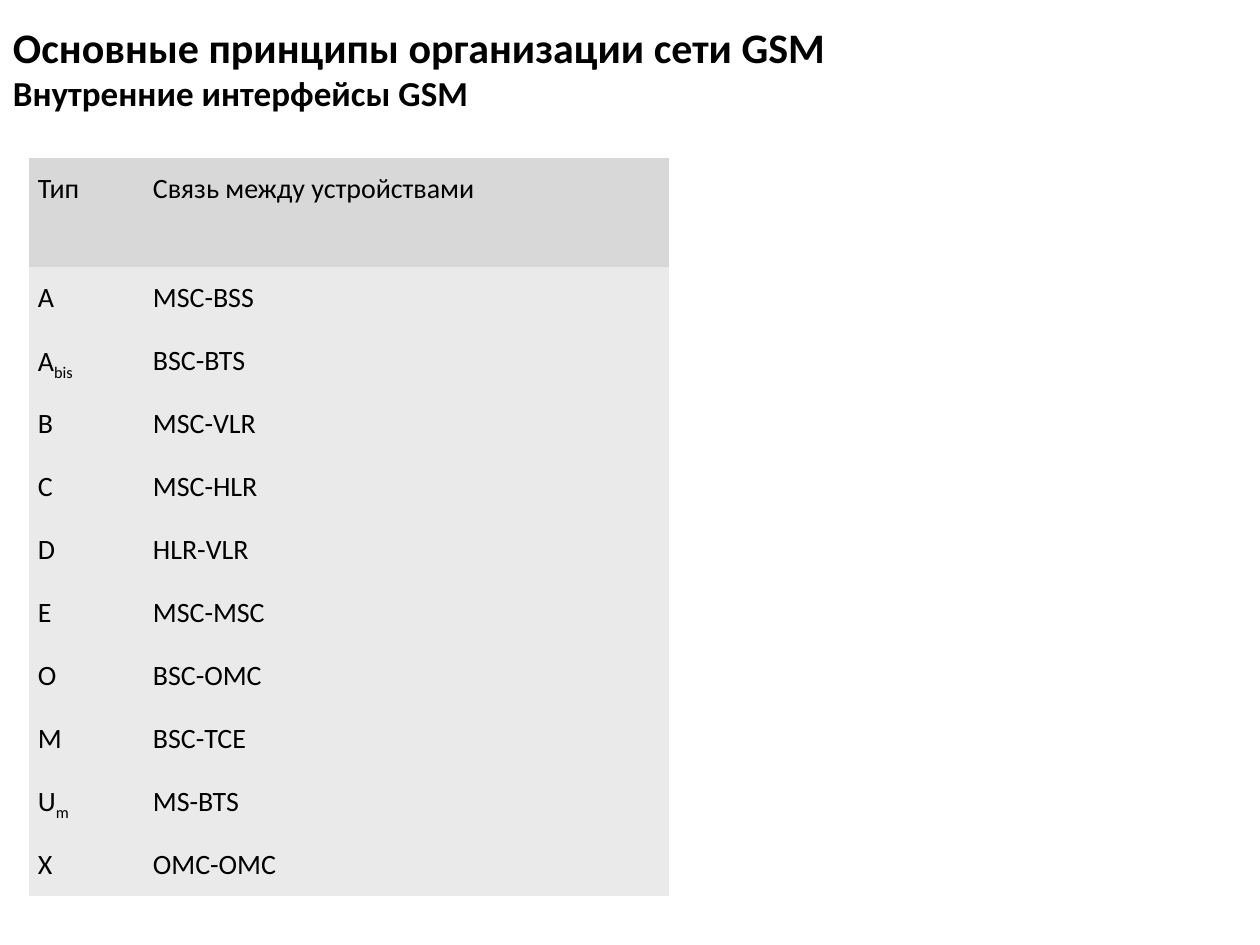
from pptx import Presentation
from pptx.dml.color import RGBColor as Rgb
from pptx.enum.text import MSO_ANCHOR as Anchor
from pptx.util import Pt

PX = 914400 // 126
FONT = "Calibri"
INK, HEAD, BODY = "000000", "D8D8D8", "EAEAEA"
PLAIN = "{2D5ABB26-0587-4C30-8999-92F81FD0307C}"  # table style without grid

TITLE = [
    ("Основные принципы организации сети GSM", 24),
    ("Внутренние интерфейсы GSM", 20),
]
# Type, subscript, linked devices
ROWS = [
    ("Тип", "", "Связь между устройствами"),
    ("A", "", "MSC-BSS"),
    ("A", "bis", "BSC-BTS"),
    ("B", "", "MSC-VLR"),
    ("C", "", "MSC-HLR"),
    ("D", "", "HLR-VLR"),
    ("E", "", "MSC-MSC"),
    ("O", "", "BSC-OMC"),
    ("M", "", "BSC-TCE"),
    ("U", "m", "MS-BTS"),
    ("X", "", "OMC-OMC"),
]


def px(*nums):
    return [n * PX for n in nums]


def color(code):
    return Rgb.from_string(code)


def apply(obj, vals):
    for name, val in vals.items():
        setattr(obj, name, val)


def add_run(para, text, size, bold=False, sub=False):
    run = para.add_run()
    run.text = text
    apply(run.font, {"name": FONT, "size": Pt(size), "bold": bold})
    run.font.color.rgb = color(INK)
    if sub:
        run._r.get_or_add_rPr().set("baseline", "-25000")


def add_title(slide):
    frame = slide.shapes.add_textbox(*px(0, 0, 847, 156)).text_frame
    apply(frame, {"word_wrap": True, "vertical_anchor": Anchor.TOP,
                  "margin_left": 13 * PX, "margin_right": 13 * PX,
                  "margin_top": 21 * PX, "margin_bottom": 4 * PX})
    for i, (text, size) in enumerate(TITLE):
        para = frame.add_paragraph() if i else frame.paragraphs[0]
        add_run(para, text, size, bold=True)


def fill_cell(cell, text, sub, back):
    cell.fill.solid()
    cell.fill.fore_color.rgb = color(back)
    apply(cell, {f"margin_{side}": 9 * PX
                 for side in ("left", "right", "top", "bottom")})
    para = cell.text_frame.paragraphs[0]
    apply(para, {"line_spacing": 1.15, "space_before": Pt(12),
                 "space_after": Pt(2)})
    add_run(para, text, 16)
    if sub:
        add_run(para, sub, 16, sub=True)


def add_grid(slide):
    wide = [115, 525]
    tall = [109] + [63] * (len(ROWS) - 1)
    shape = slide.shapes.add_table(
        len(ROWS), len(wide), *px(29, 158, sum(wide), sum(tall)))
    table = shape.table
    apply(table, {"first_row": False, "horz_banding": False})
    for node in shape.element.iter("{*}tableStyleId"):
        node.text = PLAIN
    for col, width in zip(table.columns, px(*wide)):
        col.width = width
    for row, height in zip(table.rows, px(*tall)):
        row.height = height
    for i, (kind, sub, link) in enumerate(ROWS):
        back = BODY if i else HEAD
        fill_cell(table.cell(i, 0), kind, sub, back)
        fill_cell(table.cell(i, 1), link, "", back)


def main():
    deck = Presentation()
    deck.slide_width, deck.slide_height = px(1260, 945)
    slide = deck.slides.add_slide(deck.slide_layouts[6])
    add_title(slide)
    add_grid(slide)
    deck.save("out.pptx")


if __name__ == "__main__":
    main()
